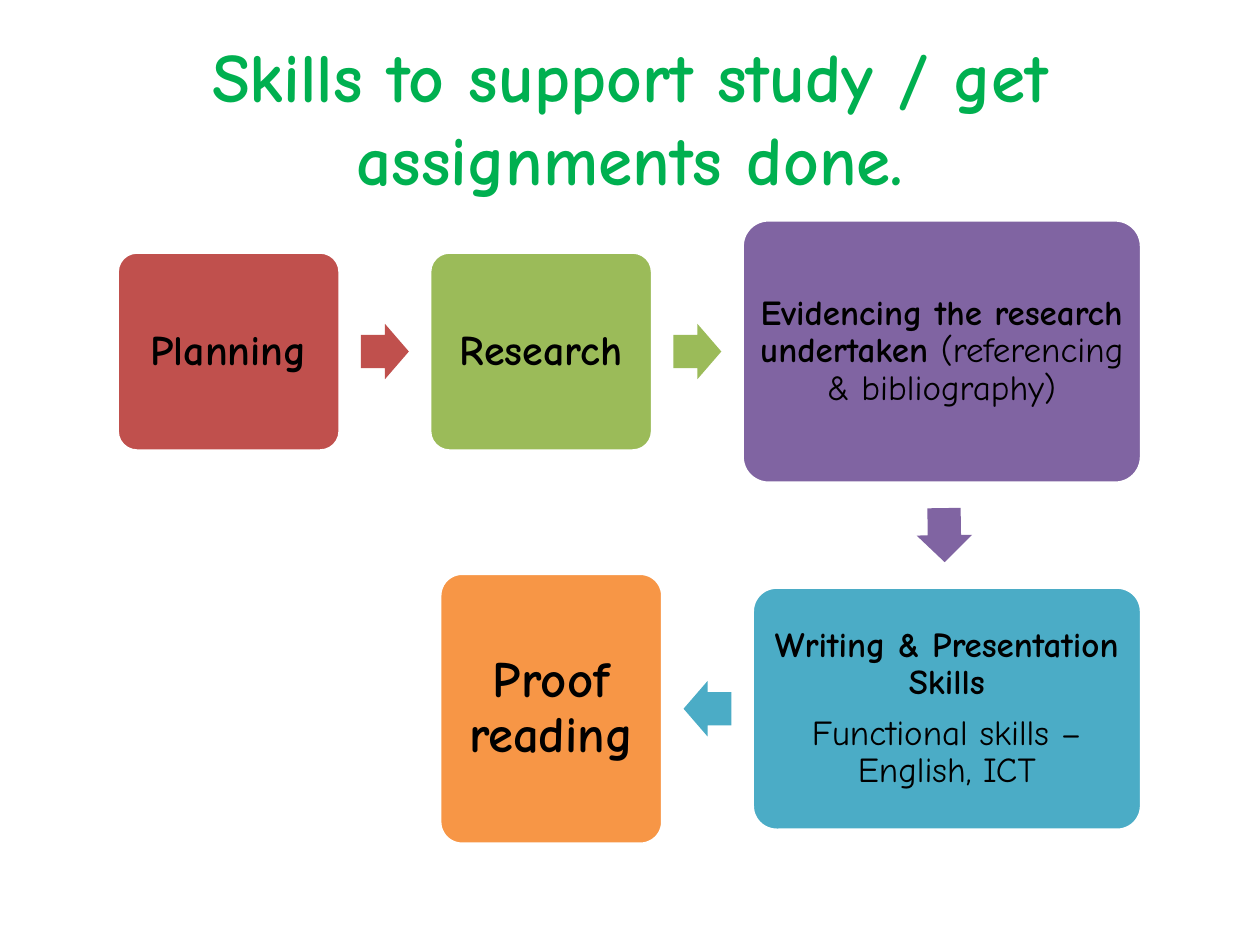
"""Build a slide of study skills as a snaking flow of five steps."""
from dataclasses import dataclass
from itertools import pairwise
from math import atan2, degrees

from pptx import Presentation
from pptx import util as u
from pptx.dml.color import RGBColor
from pptx.enum import shapes, text

TITLE = "Skills to support study / get assignments done."
STEPS = [
    dict(row=0, size=(1.77, 1.58), fill="C0504D", pt=24, pad=0.1,
         paras=[[("Planning", True)]]),
    dict(row=0, size=(1.77, 1.58), fill="9BBB59", pt=24, pad=0.1,
         paras=[[("Research", True)]]),
    dict(row=0, size=(3.17, 2.09), fill="8064A2", pt=20, pad=0.08,
         paras=[[("Evidencing the research undertaken ", True),
                 ("(referencing & bibliography)", False)]]),
    dict(row=1, size=(3.09, 1.93), fill="4BACC6", pt=20, pad=0.08,
         paras=[[("Writing & Presentation Skills", True)],
                [("Functional skills – English, ICT", False)]]),
    dict(row=1, size=(1.77, 2.15), fill="F79646", pt=29, pad=0.12,
         paras=[[("Proof reading", True)]]),
]


@dataclass
class Theme:
    """Fonts, colours and sizes."""
    font: str = "Comic Neue"
    head: str = "00B050"
    ink: str = "000000"
    edge: str = "FFFFFF"
    title: float = 39.6


LOOK = Theme()
WIDE, HIGH = 10, 7.5
LEFT, GAP = 0.93, 0.71
ROWS = (0.372 * HIGH, 0.75 * HIGH)
ARROW = {0: (0.38, 0.44), 1: (0.43, 0.44)}


def add_run(para, words, size, color, bold):
    """Add one formatted run."""
    run = para.add_run()
    run.text = words
    font = run.font
    font.name, font.size, font.bold = LOOK.font, u.Pt(size), bold
    font.color.rgb = RGBColor.from_string(color)


def add_form(slide, kind, mid, size, fill):
    """Add a flat filled shape centred on a point."""
    left, top = (m - s / 2 for m, s in zip(mid, size))
    form = slide.shapes.add_shape(kind, *map(u.Inches, (left, top, *size)))
    form.shadow.inherit = False
    form.fill.solid()
    form.fill.fore_color.rgb = RGBColor.from_string(fill)
    form.line.fill.background()
    return form


def add_step(slide, step, mid):
    """Add one rounded box with its text."""
    box = add_form(slide, shapes.MSO_SHAPE.ROUNDED_RECTANGLE, mid,
                   step["size"], step["fill"])
    box.adjustments[0] = 0.1
    box.line.color.rgb = RGBColor.from_string(LOOK.edge)
    box.line.width = u.Pt(2)
    frame = box.text_frame
    frame.word_wrap = True
    frame.vertical_anchor = text.MSO_ANCHOR.MIDDLE
    pad = u.Inches(step["pad"])
    frame.margin_left = frame.margin_right = pad
    frame.margin_top = frame.margin_bottom = pad
    for i, runs in enumerate(step["paras"]):
        para = frame.add_paragraph() if i else frame.paragraphs[0]
        para.alignment = text.PP_ALIGN.CENTER
        para.line_spacing = 0.9
        para.space_after = u.Pt(0.35 * step["pt"])
        for words, bold in runs:
            add_run(para, words, step["pt"], LOOK.ink, bold)


def place_steps():
    """Run row one rightwards and row two back from its right edge."""
    mids, edge = [], LEFT
    for step in STEPS:
        wide, row = step["size"][0], step["row"]
        if row == 0:
            mids.append((edge + wide / 2, ROWS[row]))
            edge += wide + GAP
            right = edge - GAP
        else:
            mids.append((right - wide / 2, ROWS[row]))
            right -= wide + GAP
    return mids


def add_arrow(slide, start, end):
    """Point an arrow from one step to the next, midway in the gap."""
    (step, (x, y)), (goal, (to_x, to_y)) = start, end
    turn = step["row"] != goal["row"]
    way = 1 if to_x > x else -1
    if turn:
        mid = ((x + to_x) / 2,
               (y + step["size"][1] / 2 + to_y - goal["size"][1] / 2) / 2)
    else:
        mid = (x + way * (step["size"][0] + GAP) / 2, y)
    arrow = add_form(slide, shapes.MSO_SHAPE.RIGHT_ARROW, mid,
                     ARROW[turn], step["fill"])
    arrow.adjustments[0], arrow.adjustments[1] = 0.6, 0.5
    arrow.rotation = round(degrees(atan2(to_y - y, to_x - x)), 1)


def main():
    """Build and save the slide."""
    deck = Presentation()
    deck.slide_width, deck.slide_height = u.Inches(WIDE), u.Inches(HIGH)
    slide = deck.slides.add_slide(deck.slide_layouts[5])
    head = slide.shapes.title
    head.left, head.top, head.width, head.height = map(
        u.Inches, (0.05 * WIDE, 0.04 * HIGH, 0.9 * WIDE, 1.25))
    head.text_frame.vertical_anchor = text.MSO_ANCHOR.MIDDLE
    head.text_frame.auto_size = text.MSO_AUTO_SIZE.NONE
    para = head.text_frame.paragraphs[0]
    para.alignment = text.PP_ALIGN.CENTER
    add_run(para, TITLE, LOOK.title, LOOK.head, True)
    flow = list(zip(STEPS, place_steps()))
    for step, mid in flow:
        add_step(slide, step, mid)
    for start, end in pairwise(flow):
        add_arrow(slide, start, end)
    deck.save("out.pptx")


if __name__ == "__main__":
    main()
